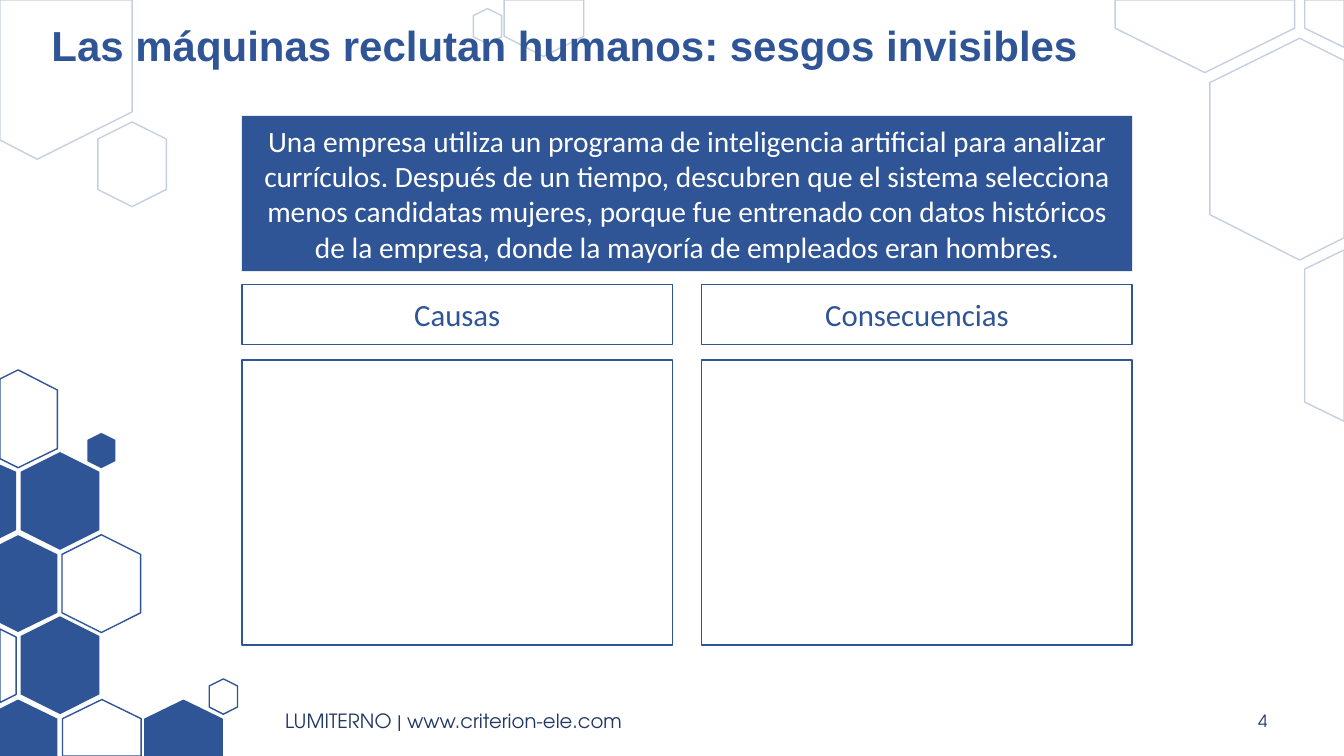
from lxml.etree import SubElement
from pptx import Presentation
from pptx.dml.color import RGBColor
from pptx.enum.shapes import MSO_SHAPE
from pptx.enum.text import MSO_ANCHOR, MSO_AUTO_SIZE, PP_ALIGN
from pptx.oxml.ns import qn
from pptx.util import Pt

PX = 9144  # EMU in one px, 100 px to the inch
BLUE = RGBColor(0x2F, 0x55, 0x97)
NAVY = RGBColor(0x20, 0x38, 0x64)
WHITE = RGBColor(0xFF, 0xFF, 0xFF)
GEOM = "TeX Gyre Adventor"

# Each comb: left, top, whole hexagons (box before its quarter turn), cut outlines
TOP = (0, 0, [
    ("faint", (466, 12, 35, 28)),
    ("faint", (89, 129, 84, 68)),
], [
    ("faint", [(500, 0), (579, 0), (579, 36), (539, 56), (500, 36)]),
    ("faint", [(0, 0), (131, 0), (131, 111), (37, 158), (0, 139)]),
])
RIGHT = (1100, 0, [], [
    ("faint", [(6, 0), (184, 0), (184, 28), (95, 72), (6, 28)]),
    ("faint", [(194, 0), (233, 0), (233, 47), (194, 28)]),
    ("faint", [(189, 38), (233, 60), (233, 236), (189, 258),
               (100, 213), (100, 82)]),
    ("faint", [(233, 248), (233, 418), (194, 399), (194, 267)]),
])
CORNER = (0, 360, [
    ("solid", (11, 98, 97, 78)),
    ("open", (52, 180, 97, 78)),
    ("solid", (11, 261, 97, 78)),
    ("open", (204, 317, 35, 28)),
    ("solid", (83, 73, 35, 28)),
], [
    ("open", [(18, 7), (57, 27), (57, 85), (18, 104), (0, 95), (0, 16)]),
    ("solid", [(0, 101), (16, 108), (16, 166), (0, 174)]),
    ("solid", [(18, 171), (57, 190), (57, 248), (18, 267), (0, 258), (0, 180)]),
    ("open", [(0, 264), (16, 272), (16, 329), (0, 337)]),
    ("solid", [(18, 334), (57, 353), (57, 390), (0, 390), (0, 343)]),
    ("open", [(101, 334), (140, 353), (140, 390), (62, 390), (62, 353)]),
    ("solid", [(182, 334), (221, 353), (221, 390), (143, 390), (143, 353)]),
])


def emu(*box):
    return [n * PX for n in box]


def paint(shape, style):
    """Style is solid, open (white, outlined), faint (pale outline) or clear."""
    shape.shadow.inherit = False
    if style == "clear":
        shape.fill.background()
    else:
        shape.fill.solid()
        shape.fill.fore_color.rgb = BLUE if style == "solid" else WHITE
    if style == "solid":
        shape.line.fill.background()
        return
    shape.line.color.rgb = BLUE
    shape.line.width = Pt(1)
    if style == "faint":
        tint = shape.line._ln.find(".//" + qn("a:srgbClr"))
        SubElement(tint, qn("a:alpha")).set("val", "28000")


def write(shape, text, font, size, color, align=PP_ALIGN.LEFT):
    frame = shape.text_frame
    frame.text = text
    frame.word_wrap = True
    frame.auto_size = MSO_AUTO_SIZE.NONE
    frame.vertical_anchor = MSO_ANCHOR.MIDDLE
    para = frame.paragraphs[0]
    para.alignment = align
    para.font.name = font
    para.font.size = Pt(size)
    para.font.color.rgb = color
    return para


def comb(slide, left, top, whole, cut):
    for style, (x, y, w, h) in whole:
        cell = slide.shapes.add_shape(
            MSO_SHAPE.HEXAGON, *emu(left + x, top + y, w, h))
        cell.rotation = 90
        paint(cell, style)
    for style, points in cut:
        first, *rest = [(left + x, top + y) for x, y in points]
        outline = slide.shapes.build_freeform(*first, scale=PX)
        outline.add_line_segments(rest)
        paint(outline.convert_to_shape(), style)


def panel(slide, box, style):
    shape = slide.shapes.add_shape(MSO_SHAPE.RECTANGLE, *emu(*box))
    paint(shape, style)
    return shape


def title(slide, box, text):
    head = slide.shapes.title
    head.left, head.top, head.width, head.height = emu(*box)
    para = write(head, text, "Arial", 30, BLUE)
    para.font.bold = True
    para.line_spacing = 0.9
    tree = head._element.getparent()
    tree.append(head._element)  # in front of the combs


def column(slide, box, label):
    """A heading box with an empty answer box below it."""
    x, y, w, h = box
    head, gap = 60, 15
    write(panel(slide, (x, y, w, head), "clear"),
          label, "Calibri", 22, BLUE, PP_ALIGN.CENTER)
    panel(slide, (x, y + head + gap, w, h - head - gap), "clear")


def task(slide, box, text, labels):
    x, y, w, h = box
    case, skip, gap = 154, 13, 29
    write(panel(slide, (x, y, w, case), "solid"),
          text, "Calibri", 21, WHITE, PP_ALIGN.CENTER)
    wide = (w - gap * (len(labels) - 1)) // len(labels)
    start = case + skip
    for i, label in enumerate(labels):
        column(slide, (x + i * (wide + gap), y + start, wide, h - start), label)


def footer(slide, box, text, number):
    x, y, w, h = box
    note = slide.shapes.add_textbox(*emu(x, y, 653, h))
    write(note, text, GEOM, 14, NAVY)
    page = slide.shapes.add_textbox(*emu(x + w - 99, y, 99, h))
    write(page, number, GEOM, 12, NAVY, PP_ALIGN.RIGHT)


def main():
    deck = Presentation()
    deck.slide_width, deck.slide_height = emu(1333, 750)
    slide = deck.slides.add_slide(deck.slide_layouts[5])
    for group in (TOP, RIGHT, CORNER):
        comb(slide, *group)
    footer(slide, (273, 695, 994, 40),
           "LUMITERNO | www.criterion-ele.com", "4")
    title(slide, (41, 18, 1156, 60),
          "Las máquinas reclutan humanos: sesgos invisibles")
    task(slide, (240, 115, 883, 525),
         "Una empresa utiliza un programa de inteligencia artificial para "
         "analizar currículos. Después de un tiempo, descubren que el sistema "
         "selecciona menos candidatas mujeres, porque fue entrenado con datos "
         "históricos de la empresa, donde la mayoría de empleados eran hombres.",
         ["Causas", "Consecuencias"])
    deck.save("out.pptx")


if __name__ == "__main__":
    main()
